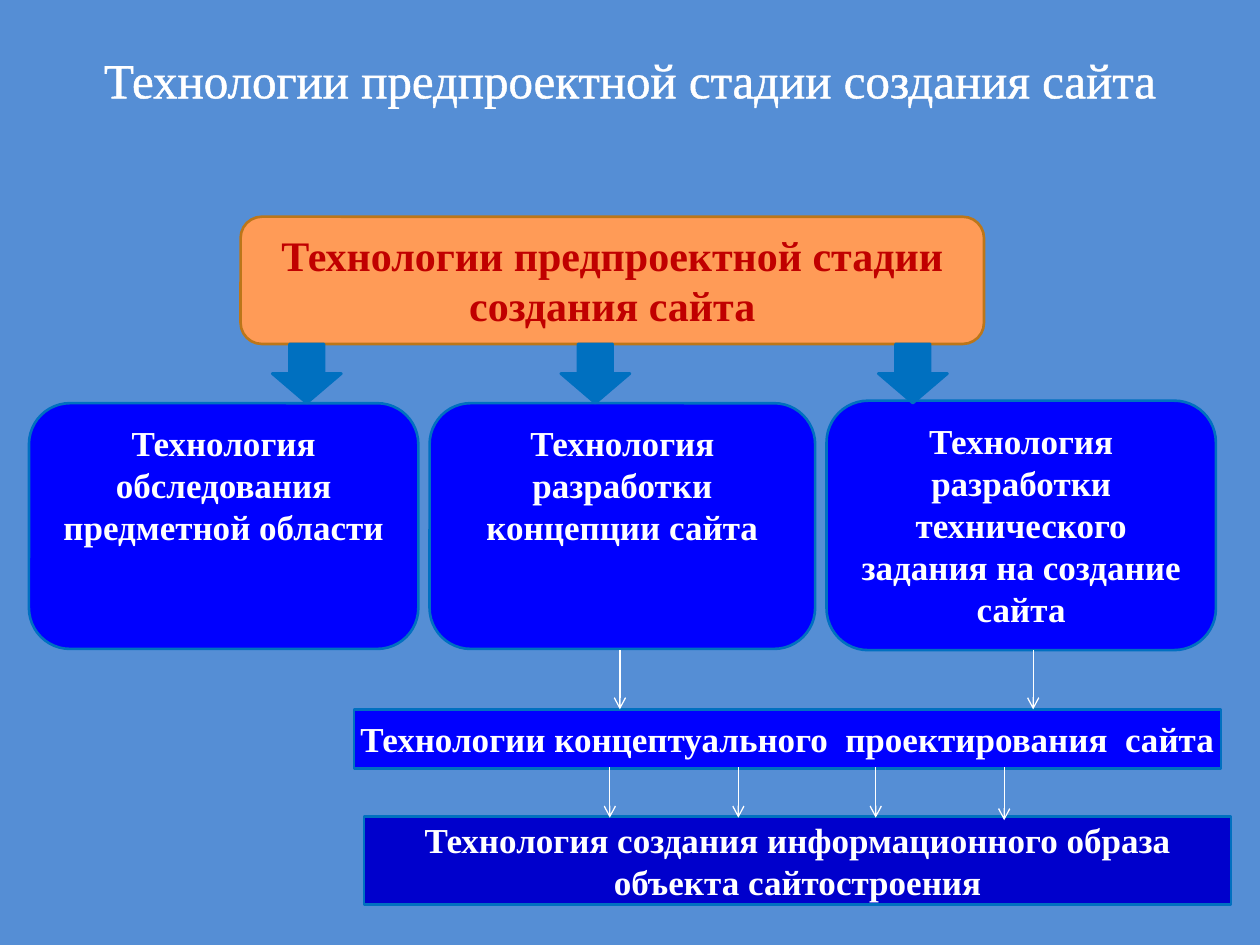
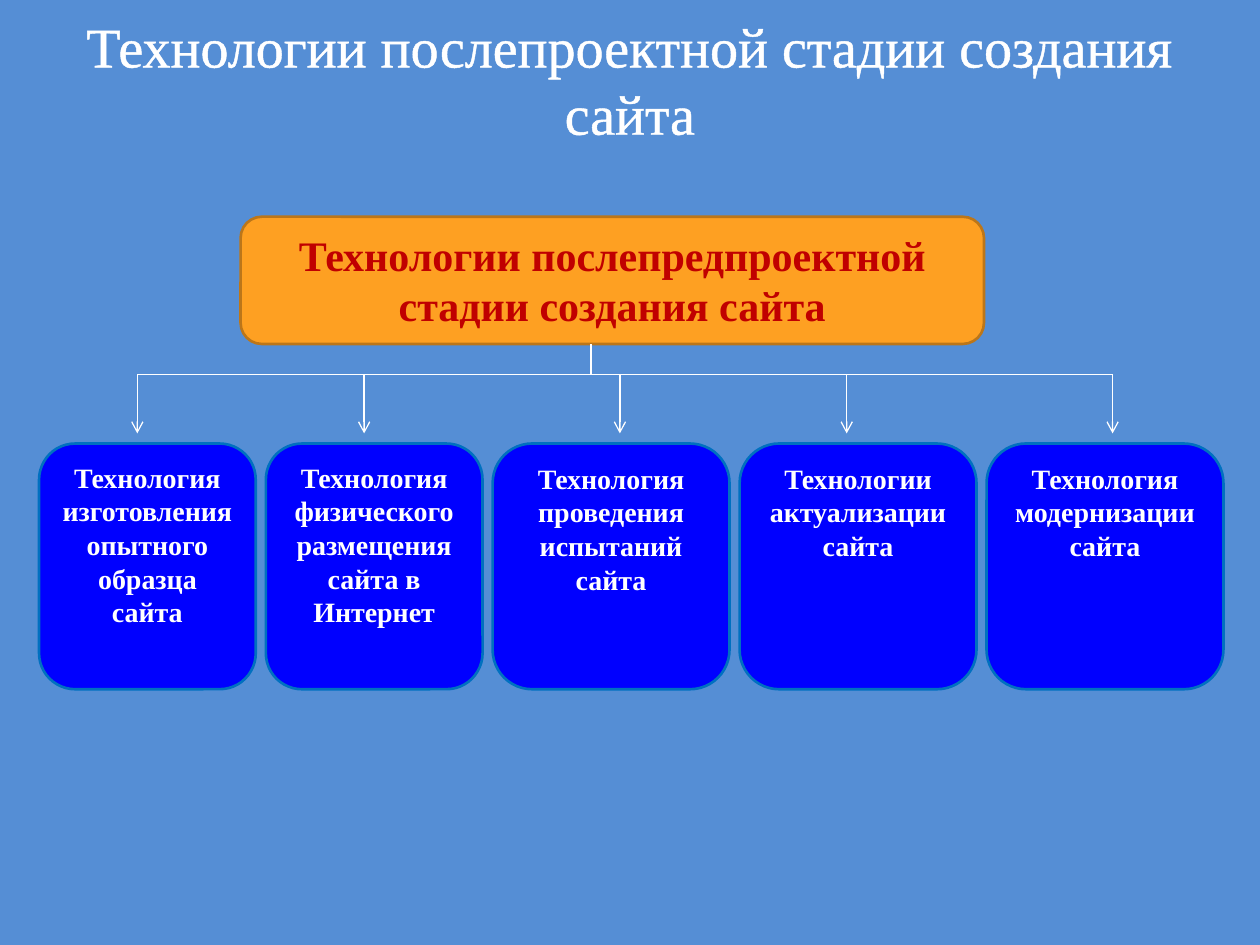
from lxml import etree
from pptx import Presentation
from pptx.dml.color import RGBColor
from pptx.enum.shapes import MSO_CONNECTOR, MSO_SHAPE
from pptx.enum.text import MSO_ANCHOR, MSO_AUTO_SIZE, PP_ALIGN
from pptx.oxml.ns import qn
from pptx.util import Inches, Pt

ROUND, RECT, DOWN = MSO_SHAPE.ROUNDED_RECTANGLE, MSO_SHAPE.RECTANGLE, MSO_SHAPE.DOWN_ARROW
TOP, MIDDLE = MSO_ANCHOR.TOP, MSO_ANCHOR.MIDDLE
CENTER, NO_FIT = PP_ALIGN.CENTER, MSO_AUTO_SIZE.NONE
STRAIGHT = MSO_CONNECTOR.STRAIGHT

WIDTH, HEIGHT = 10, 7.5
FONT = "Times New Roman"
COLORS = {
    "background": "558ED5", "white": "FFFFFF", "card": "0000FF", "edge": "0070C0",
    "result": "0000CC", "peach": "FF9B57", "orange": "FEA022",
    "heading_edge": "BC7619", "heading_text": "C00000",
}
TITLE_BOX = (WIDTH * 0.05, 0, WIDTH * 0.9, HEIGHT / 6)
HEADING_BOX = (1.91, 1.72, 5.9, 1.01)
HEADING_BOTTOM = 2.73

PRE_DESIGN = {
    "title": "Технологии предпроектной стадии создания сайта",
    "title_size": 28,
    "heading": "Технологии предпроектной стадии\nсоздания сайта",
    "heading_fill": "peach",
    "card_size": 20,
    "card_left": 0.23,
    "card_gap": 0.09,
    "cards": [
        ("Технология обследования предметной области", 3.09, 3.2, 1.95),
        ("Технология\nразработки концепции сайта", 3.06, 3.2, 1.95),
        ("Технология разработки технического задания на создание сайта", 3.09, 3.18, 1.98),
    ],
}
BLOCK_ARROWS = {"lefts": (2.16, 4.45, 6.97), "width": 0.55, "height": 0.47}
STAGES = [
    ("Технологии концептуального  проектирования  сайта", "card", (2.81, 5.63, 6.88, 0.47)),
    ("Технология создания информационного образа\nобъекта сайтостроения", "result",
     (2.89, 6.48, 6.88, 0.7)),
]
STAGE_ARROWS = [
    (5.16, 5.63, (4.92, 8.2)),
    (6.09, 6.49, (4.84, 5.86, 6.95)),
    (6.09, 6.51, (7.97,)),
]

CARD_TOP, CARD_HEIGHT = 3.52, 1.95
POST_DESIGN = {
    "title": "Технологии послепроектной стадии создания сайта",
    "title_size": 32,
    "heading": "Технологии послепредпроектной стадии создания сайта",
    "heading_fill": "orange",
    "card_size": 16,
    "card_left": 0.31,
    "card_gap": 0.08,
    "cards": [
        (text, width, CARD_TOP, CARD_HEIGHT) for text, width in (
            ("Технология изготовления опытного образца сайта", 1.72),
            ("Технология физического размещения сайта в Интернет", 1.72),
            ("Технология проведения испытаний сайта", 1.88),
            ("Технологии актуализации\nсайта", 1.88),
            ("Технология модернизации сайта", 1.88),
        )
    ],
}
TREE = {"trunk": 4.69, "bar": 2.97, "tips": 3.44, "branches": (1.09, 2.89, 4.92, 6.72, 8.83)}


def rgb(name):
    return RGBColor.from_string(COLORS[name])


def set_text(shape, text, size, color="white", bold=True, anchor=TOP, wrap=True):
    frame = shape.text_frame
    frame.text = text
    settings = {"vertical_anchor": anchor, "word_wrap": wrap, "auto_size": NO_FIT}
    for name, value in settings.items():
        setattr(frame, name, value)
    for para in frame.paragraphs:
        para.alignment = CENTER
        for span in para.runs:
            for name, value in {"name": FONT, "size": Pt(size), "bold": bold}.items():
                setattr(span.font, name, value)
            span.font.color.rgb = rgb(color)


def add_box(page, kind, place, fill, edge="edge"):
    box = page.shapes.add_shape(kind, *map(Inches, place))
    box.shadow.inherit = False
    box.fill.solid()
    box.fill.fore_color.rgb = rgb(fill)
    box.line.color.rgb = rgb(edge)
    box.line.width = Pt(1.5)
    return box


def add_line(page, start, end, arrow=False):
    line = page.shapes.add_connector(STRAIGHT, *map(Inches, start + end))
    line.line.color.rgb = rgb("white")
    line.line.width = Pt(0.75)
    if arrow:
        etree.SubElement(line.line._get_or_add_ln(), qn("a:tailEnd"), type="arrow")
    etree.SubElement(line._element.spPr, qn("a:effectLst"))


def add_title(page, text, size):
    title = page.shapes.title
    for name, value in zip(("left", "top", "width", "height"), TITLE_BOX):
        setattr(title, name, Inches(value))
    set_text(title, text, size, bold=False, anchor=MIDDLE)
    properties = title.text_frame.paragraphs[0].runs[0].font._element
    outline = etree.Element(qn("a:ln"), w=str(Pt(1.45)))
    fill = etree.SubElement(outline, qn("a:solidFill"))
    etree.SubElement(fill, qn("a:srgbClr"), val=COLORS["white"])
    properties.insert(0, outline)


def add_diagram(deck, content):
    page = deck.slides.add_slide(deck.slide_layouts[5])
    add_title(page, content["title"], content["title_size"])
    left = content["card_left"]
    for text, width, top, height in content["cards"]:
        card = add_box(page, ROUND, (left, top, width, height), "card")
        set_text(card, text, content["card_size"])
        left += width + content["card_gap"]
    heading = add_box(page, ROUND, HEADING_BOX, content["heading_fill"], "heading_edge")
    set_text(heading, content["heading"], 24, "heading_text")
    return page


def add_stages(page):
    for left in BLOCK_ARROWS["lefts"]:
        place = (left, HEADING_BOTTOM, BLOCK_ARROWS["width"], BLOCK_ARROWS["height"])
        add_box(page, DOWN, place, "edge")
    for text, fill, place in STAGES:
        set_text(add_box(page, RECT, place, fill), text, 20, anchor=MIDDLE, wrap=False)
    for top, bottom, columns in STAGE_ARROWS:
        for column in columns:
            add_line(page, (column, top), (column, bottom), arrow=True)


def add_tree(page):
    trunk, bar, branches = TREE["trunk"], TREE["bar"], TREE["branches"]
    add_line(page, (trunk, bar), (trunk, HEADING_BOTTOM))
    add_line(page, (branches[0], bar), (branches[-1], bar))
    for branch in branches:
        add_line(page, (branch, bar), (branch, TREE["tips"]), arrow=True)


def main():
    deck = Presentation()
    deck.slide_width, deck.slide_height = Inches(WIDTH), Inches(HEIGHT)
    background = deck.slide_master.background.fill
    background.solid()
    background.fore_color.rgb = rgb("background")
    add_stages(add_diagram(deck, PRE_DESIGN))
    add_tree(add_diagram(deck, POST_DESIGN))
    deck.save("out.pptx")


if __name__ == "__main__":
    main()
